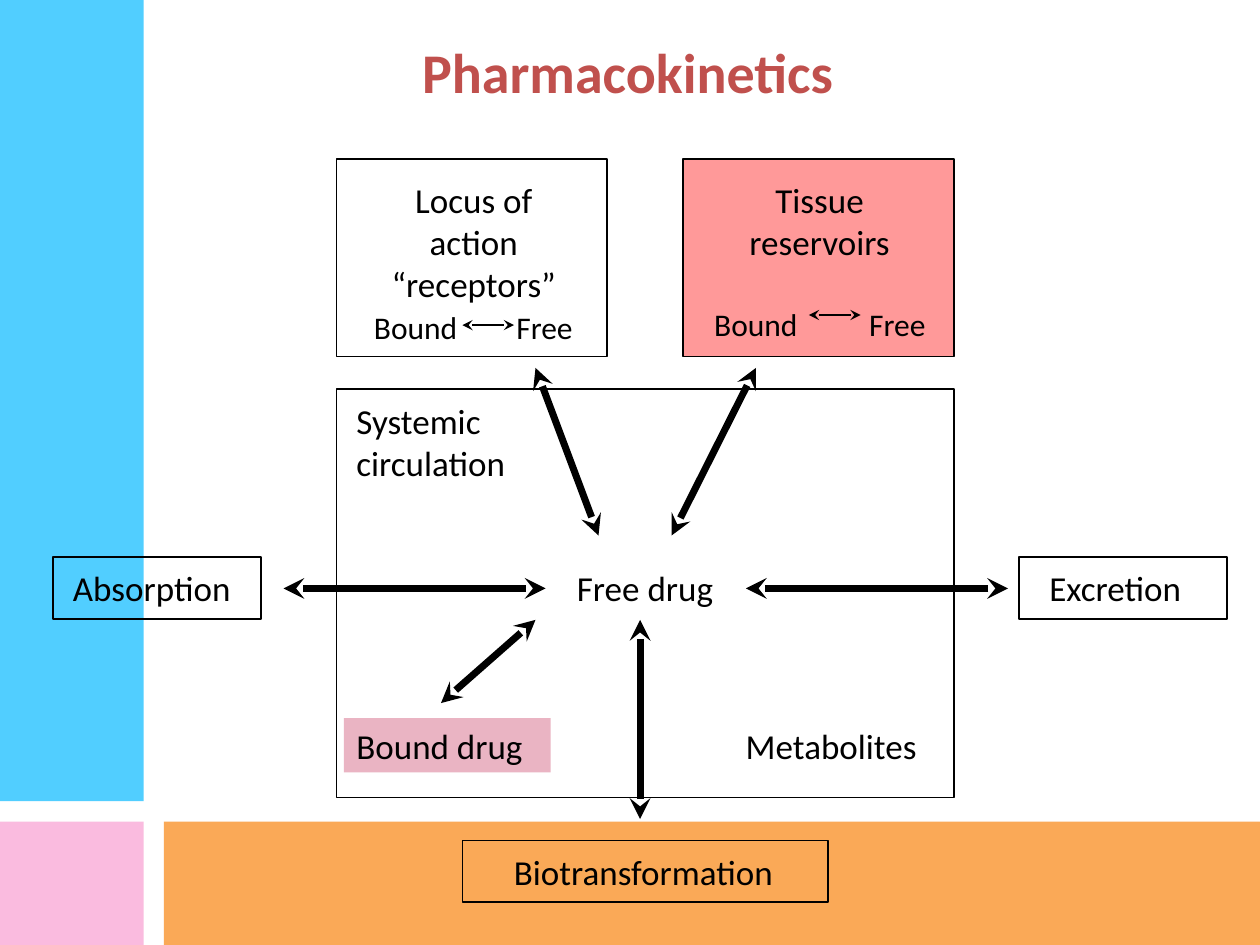
import pptx
import pptx.dml.color
import pptx.enum.shapes
import pptx.enum.text
import pptx.oxml
import pptx.oxml.ns
import pptx.util
from pptx.util import Inches

BLACK = "000000"
ALIGN = pptx.enum.text.PP_ALIGN
ANCHOR = pptx.enum.text.MSO_ANCHOR
SIDE_W, FLOOR_Y = 1.14, 6.52
STATE_Y, STATE_W, STATE_H = 1.26, 2.15, 1.57
CORE_X, CORE_W = 2.67, 4.9
MID_LABEL_Y, MID_ARROW_Y = 4.45, 4.67
LOW_LABEL_Y = 5.7


def color(value):
    return pptx.dml.color.RGBColor.from_string(value)


def add_xml(parent, tag, **attrs):
    child = parent.makeelement(pptx.oxml.ns.qn(tag), attrs)
    parent.append(child)
    return child


def style_runs(p, size, value=BLACK, bold=False):
    for r in p.runs:
        r.font.name = "Calibri"
        r.font.size = pptx.util.Pt(size)
        r.font.bold = bold
        r.font.color.rgb = color(value)


def add_box(s, x, y, w, h, fill=None, line=BLACK, alpha=None):
    sp = s.shapes.add_shape(pptx.enum.shapes.MSO_SHAPE.RECTANGLE,
                            Inches(x), Inches(y), Inches(w), Inches(h))
    sp.shadow.inherit = False
    if fill:
        sp.fill.solid()
        sp.fill.fore_color.rgb = color(fill)
    else:
        sp.fill.background()
    if alpha:
        srgb = sp.fill._xPr.find(".//" + pptx.oxml.ns.qn("a:srgbClr"))
        add_xml(srgb, "a:alpha", val=str(alpha * 1000))
    if line:
        sp.line.color.rgb = color(line)
        sp.line.width = pptx.util.Pt(1)
    else:
        sp.line.fill.background()


def add_label(s, text, x, y, w, h=0.43, wrap=False):
    tf = s.shapes.add_textbox(Inches(x), Inches(y), Inches(w), Inches(h)).text_frame
    tf.word_wrap = wrap
    tf.text = text
    for p in tf.paragraphs:
        style_runs(p, 20)
    return tf


def add_state(s, heading, x, w, free_tab, gap):
    tf = add_label(s, heading, x, 1.37, w, 1.4, wrap=True)
    for p in tf.paragraphs:
        p.alignment = ALIGN.CENTER
    p = tf.add_paragraph()
    p.text = "\tBound\tFree"
    tabs = add_xml(p._p.get_or_add_pPr(), "a:tabLst")
    for stop in (0.13, free_tab):
        add_xml(tabs, "a:tab", pos=str(Inches(stop)), algn="l")
    p.alignment = ALIGN.LEFT
    p.space_before = pptx.util.Pt(gap)
    style_runs(p, 18)


def add_arrow(s, x1, y1, x2, y2, width=4):
    c = s.shapes.add_connector(pptx.enum.shapes.MSO_CONNECTOR.STRAIGHT,
                               Inches(x1), Inches(y1), Inches(x2), Inches(y2))
    c.line.color.rgb = color(BLACK)
    c.line.width = pptx.util.Pt(width)
    ln = c.line._get_or_add_ln()
    for end in ("a:headEnd", "a:tailEnd"):
        add_xml(ln, end, type="stealth")
    add_xml(c._element.spPr, "a:effectLst")


def set_title(s, text):
    sp = s.shapes.title
    sp.left, sp.top, sp.width, sp.height = map(Inches, (3.25, 0.25, 4, 0.63))
    tf = sp.text_frame
    tf.text = text
    tf.word_wrap = False
    tf.vertical_anchor = ANCHOR.TOP
    tf.paragraphs[0].alignment = ALIGN.LEFT
    style_runs(tf.paragraphs[0], 32, "C0504D", True)


def main():
    prs = pptx.Presentation()
    prs.slide_width, prs.slide_height = Inches(10), Inches(7.5)
    s = prs.slides.add_slide(prs.slide_layouts[5])

    for x, y, w, h, fill in (
        (1.3, FLOOR_Y, 8.7, 0.98, "F9942E"),
        (0, FLOOR_Y, SIDE_W, 0.98, "F9ABD7"),
        (0, 0, SIDE_W, 6.36, "26C2FF"),
    ):
        add_box(s, x, y, w, h, fill, line=None, alpha=80)
    set_title(s, "Pharmacokinetics")

    add_box(s, CORE_X, STATE_Y, STATE_W, STATE_H)
    add_box(s, CORE_X + CORE_W - STATE_W, STATE_Y, STATE_W, STATE_H, "FF9999")
    add_box(s, CORE_X, 3.09, CORE_W, 3.24)
    add_box(s, 2.73, LOW_LABEL_Y, 1.64, 0.43, "EAB4C3", line=None)
    for x, y, w in ((0.42, 4.42, 1.65), (8.09, 4.42, 1.65), (3.67, 6.67, 2.9)):
        add_box(s, x, y, w, 0.49)

    add_state(s, "Locus of\naction\n“receptors”", 2.74, 2.04, 1.26, 2)
    add_state(s, "Tissue\nreservoirs", 5.44, 2.13, 1.36, 24)
    add_label(s, "Systemic\ncirculation", 2.73, 3.12, 1.45, 0.77)
    for text, x, y, w in (
        ("Absorption", 0.48, MID_LABEL_Y, 1.53),
        ("Free drug", 4.48, MID_LABEL_Y, 1.41),
        ("Excretion", 8.23, MID_LABEL_Y, 1.36),
        ("Bound drug", 2.73, LOW_LABEL_Y, 1.52),
        ("Metabolites", 5.82, LOW_LABEL_Y, 1.62),
        ("Biotransformation", 3.98, 6.7, 2.38),
    ):
        add_label(s, text, x, y, w)

    for ends in (
        (3.5, 5.58, 4.25, 4.92),
        (4.33, MID_ARROW_Y, 2.25, MID_ARROW_Y),
        (8, MID_ARROW_Y, 5.92, MID_ARROW_Y),
        (5.08, 4.92, 5.08, 6.5),
        (4.25, 2.92, 4.75, 4.25),
        (5.33, 4.25, 6, 2.92),
    ):
        add_arrow(s, *ends)
    for x, y in ((3.67, 2.58), (6.42, 2.5)):
        add_arrow(s, x, y, x + 0.41, y, width=1)

    prs.save("out.pptx")


if __name__ == "__main__":
    main()
